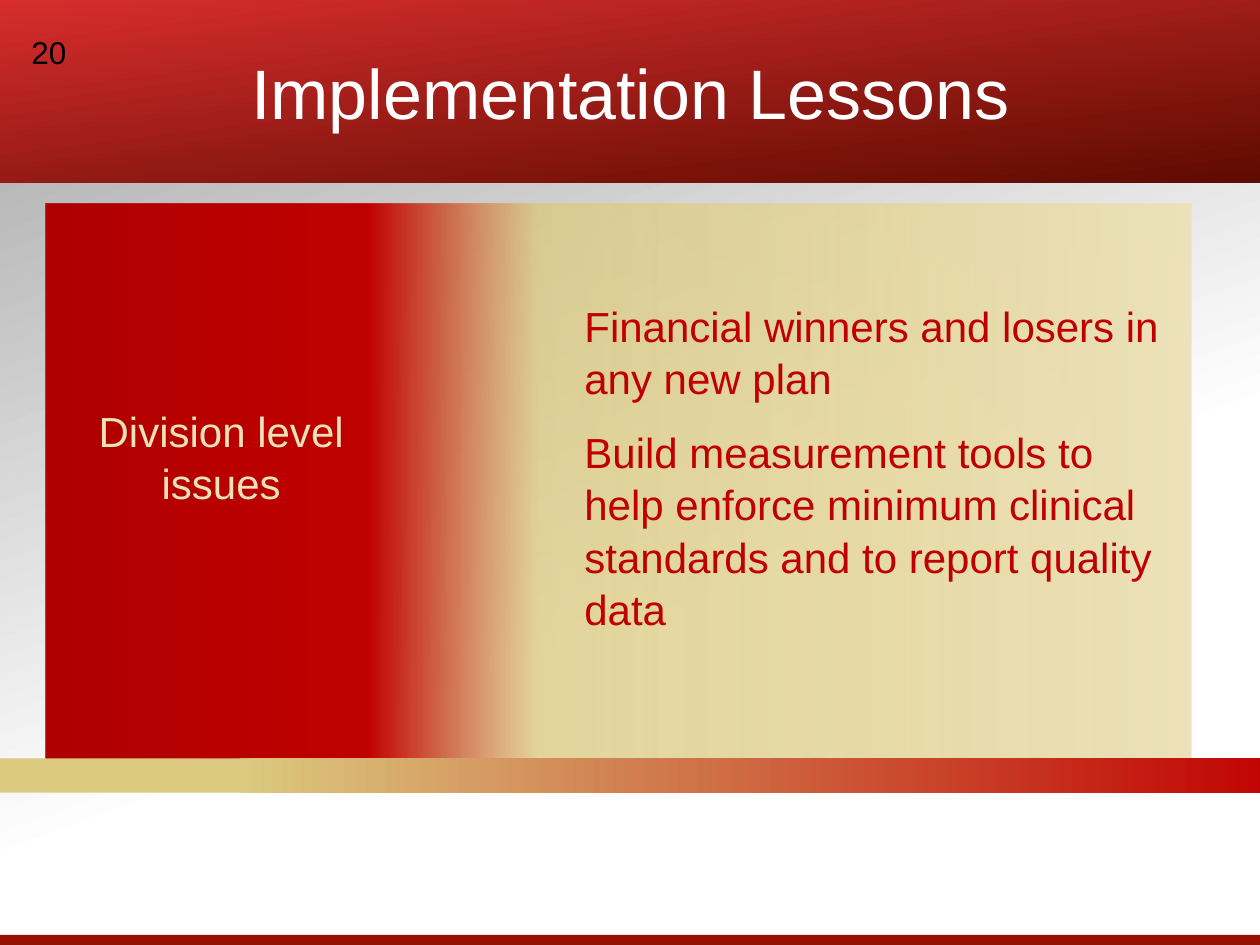
from pptx import Presentation
from pptx.dml.color import RGBColor
from pptx.enum.shapes import MSO_SHAPE
from pptx.enum.text import MSO_ANCHOR, PP_ALIGN
from pptx.oxml.ns import qn
from pptx.util import Inches, Pt
from lxml.etree import SubElement

BLACK = RGBColor(0x00, 0x00, 0x00)
WHITE = RGBColor(0xFF, 0xFF, 0xFF)
GRAY = RGBColor(0xA6, 0xA6, 0xA6)
RED = RGBColor(0xC0, 0x00, 0x00)
DEEP_RED = RGBColor(0xAE, 0x00, 0x00)
BRIGHT_RED = RGBColor(0xD7, 0x2D, 0x2D)
MAROON = RGBColor(0x5E, 0x0B, 0x00)
FOOTER_RED = RGBColor(0x95, 0x11, 0x00)
GOLD = RGBColor(0xDB, 0xC9, 0x7F)
CREAM = RGBColor(0xEC, 0xE2, 0xBA)


def write_text(frame, *paragraphs, size=24, color=BLACK, font="Arial",
               align=PP_ALIGN.LEFT, anchor=MSO_ANCHOR.TOP, gap=0,
               indent=0, line_spacing=1.0):
    frame.word_wrap = True
    frame.vertical_anchor = anchor
    for index, words in enumerate(paragraphs):
        paragraph = frame.add_paragraph() if index else frame.paragraphs[0]
        paragraph.text = words
        paragraph.alignment = align
        paragraph.line_spacing = line_spacing
        paragraph.space_before = Pt(gap if index else 0)
        if indent:
            properties = paragraph._p.get_or_add_pPr()
            properties.set("marL", str(Inches(indent)))
            properties.set("indent", "0")
        paragraph.font.name = font
        paragraph.font.size = Pt(size)
        paragraph.font.color.rgb = color


class SlideBuilder:
    def __init__(self, slide, font="Arial"):
        self.slide = slide
        self.font = font

    def gradient(self, owner, fill, stops, angle):
        fill.gradient()
        fill.gradient_angle = (360 - angle) % 360
        stop_list = owner.find(".//" + qn("a:gsLst"))
        stop_list.clear()
        for position, color, *opacity in stops:
            stop = SubElement(stop_list, qn("a:gs"), pos=str(position * 1000))
            tint = SubElement(stop, qn("a:srgbClr"), val=str(color))
            for percent in opacity:
                SubElement(tint, qn("a:alpha"), val=str(percent * 1000))

    def background(self, stops, angle):
        self.gradient(self.slide.element, self.slide.background.fill, stops, angle)

    def panel(self, box, stops=None, color=None, preset=MSO_SHAPE.RECTANGLE, corner=None):
        panel = self.slide.shapes.add_shape(preset, *map(Inches, box))
        panel.shadow.inherit = False
        panel.line.fill.background()
        if corner is not None:
            panel.adjustments[0] = corner
        if stops:
            self.gradient(panel.element, panel.fill, stops, 0)
        else:
            panel.fill.solid()
            panel.fill.fore_color.rgb = color

    def title(self, box, words, stops, angle):
        title = self.slide.shapes.title
        title.left, title.top, title.width, title.height = map(Inches, box)
        self.gradient(title.element, title.fill, stops, angle)
        write_text(title.text_frame, words, size=40, color=WHITE, font=self.font,
                   align=PP_ALIGN.CENTER, anchor=MSO_ANCHOR.MIDDLE)

    def text(self, box, *paragraphs, **style):
        frame = self.slide.shapes.add_textbox(*map(Inches, box)).text_frame
        write_text(frame, *paragraphs, font=self.font, **style)


def main():
    deck = Presentation()
    deck.slide_width, deck.slide_height = Inches(10), Inches(7.5)
    builder = SlideBuilder(deck.slides.add_slide(deck.slide_layouts[5]))

    builder.background([(0, GRAY), (62, WHITE), (100, WHITE)], 70)
    builder.panel((0, 7.42, 10, 0.1), color=FOOTER_RED)
    builder.panel((0.36, 1.62, 9.1, 4.58),
                  [(0, DEEP_RED), (28, RED), (43, GOLD, 76), (100, CREAM)],
                  preset=MSO_SHAPE.ROUNDED_RECTANGLE, corner=0)
    builder.panel((-0.18, 6.02, 10.42, 0.27),
                  [(0, GOLD), (20, GOLD), (100, RED)],
                  preset=MSO_SHAPE.ROUNDED_RECTANGLE)
    builder.title((0, 0, 10, 1.45), "Implementation Lessons",
                  [(0, BRIGHT_RED), (100, MAROON)], 83)
    builder.text((4.48, 2.32, 4.89, 2.86),
                 "Financial winners and losers in any new plan",
                 "Build measurement tools to help enforce minimum clinical "
                 "standards and to report quality data",
                 color=RED, gap=12, indent=0.06, line_spacing=1.04)
    builder.text((0.48, 3.15, 2.55, 0.91), "Division level issues",
                 color=CREAM, align=PP_ALIGN.CENTER, line_spacing=1.04)
    builder.text((0.15, 0.21, 0.89, 0.4), "20", size=18)

    deck.save("out.pptx")


if __name__ == "__main__":
    main()
